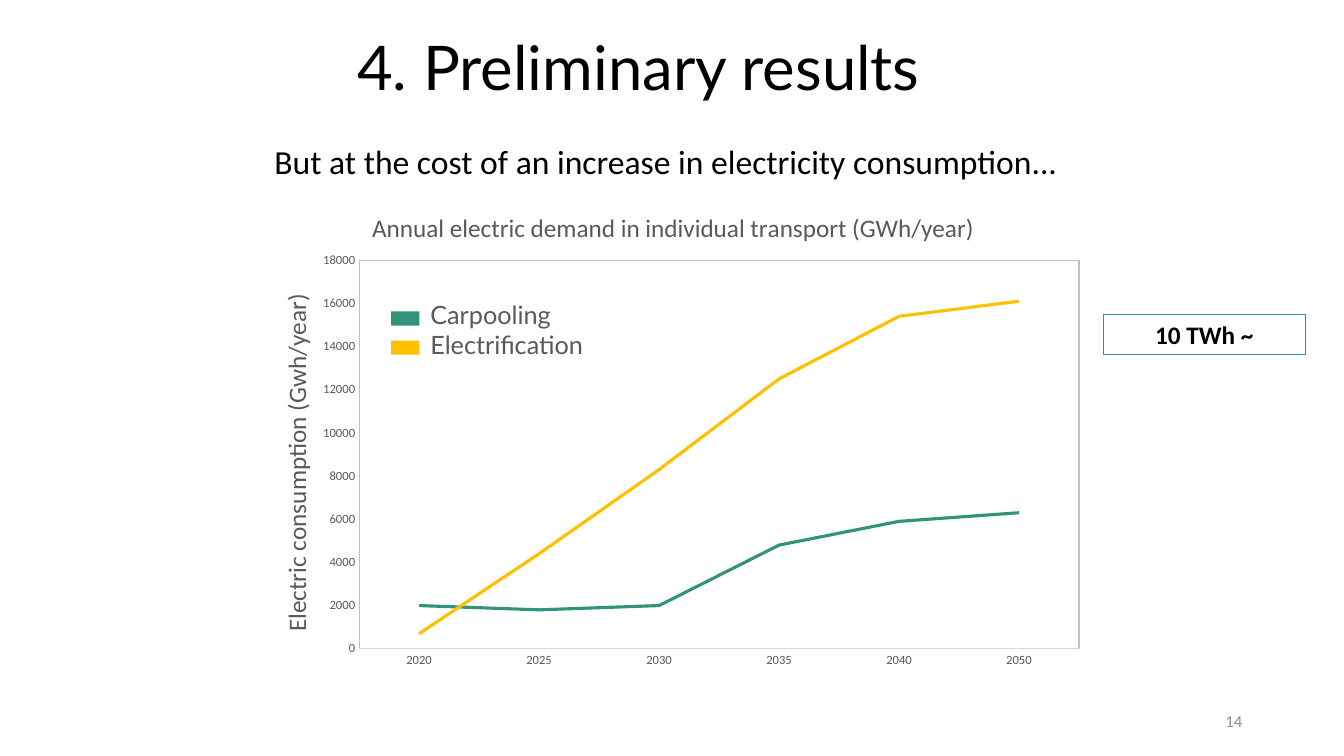
from dataclasses import dataclass

from lxml import etree
from pptx import Presentation
from pptx.chart.data import CategoryChartData
from pptx.dml.color import RGBColor
from pptx.enum import chart as ch, shapes, text
from pptx.oxml import ns, parse_xml
from pptx.util import Inches, Pt


@dataclass(frozen=True)
class Theme:
    black: str = "000000"
    grey: str = "595959"
    page_grey: str = "8C8C8C"
    frame: str = "BFBFBF"
    axis: str = "D9D9D9"
    callout: str = "2E8EA8"
    body_font: str = "Calibri"
    title_font: str = "Lato"
    title_size: int = 44
    lead_size: int = 24
    label_size: int = 18
    page_size: int = 12
    tick_size: int = 9


THEME = Theme()
YEARS = ["2020", "2025", "2030", "2035", "2040", "2050"]
SCENARIOS = [
    ("Carpooling", "31937B", [2000, 1800, 2000, 4800, 5900, 6300]),
    ("Electrification", "FFC000", [700, 4400, 8300, 12500, 15400, 16100]),
]


def box(*lengths):
    return [Inches(length) for length in lengths]


def style(font, size, color, name=THEME.body_font, bold=False):
    font.size = Pt(size)
    font.name = name
    font.bold = bold
    font.color.rgb = RGBColor.from_string(color)


def write(frame, lines, size, color, align, name=THEME.body_font, bold=False,
          anchor=text.MSO_ANCHOR.TOP):
    frame.word_wrap = True
    frame.vertical_anchor = anchor
    frame.text = "\n".join(lines)
    for paragraph in frame.paragraphs:
        paragraph.alignment = align
        style(paragraph.font, size, color, name, bold)


def add_label(slide, place, lines, *args, **kwargs):
    label = slide.shapes.add_textbox(*box(*place))
    write(label.text_frame, lines, *args, **kwargs)


def add_rectangle(slide, place, fill=None, line=None):
    rectangle = slide.shapes.add_shape(shapes.MSO_SHAPE.RECTANGLE, *box(*place))
    rectangle.shadow.inherit = False
    if fill:
        rectangle.fill.solid()
        rectangle.fill.fore_color.rgb = RGBColor.from_string(fill)
    else:
        rectangle.fill.background()
    if line:
        rectangle.line.color.rgb = RGBColor.from_string(line)
        rectangle.line.width = Pt(0.75)
    else:
        rectangle.line.fill.background()
    return rectangle


def set_layout(parent, index, inner=False, **fractions):
    for old in parent.findall(ns.qn("c:layout")):
        parent.remove(old)
    layout = etree.Element(ns.qn("c:layout"))
    manual = etree.SubElement(layout, ns.qn("c:manualLayout"))
    settings = {"layoutTarget": "inner"} if inner else {}
    settings.update(xMode="edge", yMode="edge", **fractions)
    for tag, value in settings.items():
        etree.SubElement(manual, ns.qn(f"c:{tag}")).set("val", str(value))
    parent.insert(index, layout)


def add_title(owner, title, words, x, y):
    title.text_frame.text = words
    style(title.text_frame.paragraphs[0].font, THEME.label_size, THEME.grey)
    set_layout(title._element, 1, x=x, y=y)


def frame_plot(plot_area):
    plot_area.append(parse_xml(
        f'<c:spPr {ns.nsdecls("c", "a")}><a:noFill/><a:ln w="9525"><a:solidFill>'
        f'<a:srgbClr val="{THEME.frame}"/></a:solidFill></a:ln></c:spPr>'))


def add_demand_chart(slide):
    data = CategoryChartData()
    data.categories = YEARS
    for name, _, values in SCENARIOS:
        data.add_series(name, values)
    chart = slide.shapes.add_chart(
        ch.XL_CHART_TYPE.LINE, *box(2.47, 1.85, 8.4, 4.88), data).chart
    chart.has_legend = False
    style(chart.font, THEME.tick_size, THEME.grey)
    add_title(chart, chart.chart_title,
              "Annual electric demand in individual transport (GWh/year)", 0.14, 0.04)

    years, demand = chart.category_axis, chart.value_axis
    for axis in (years, demand):
        axis.has_major_gridlines = False
        axis.major_tick_mark = axis.minor_tick_mark = ch.XL_TICK_MARK.NONE
        style(axis.tick_labels.font, THEME.tick_size, THEME.grey)
    years.format.line.color.rgb = RGBColor.from_string(THEME.axis)
    years.format.line.width = Pt(0.75)
    demand.format.line.fill.background()
    demand.minimum_scale, demand.maximum_scale, demand.major_unit = 0, 18000, 2000
    add_title(demand, demand.axis_title, "Electric consumption (Gwh/year)", 0.03, 0.21)

    plot = chart.plots[0]
    plot.vary_by_categories = False
    for series, (_, color, _) in zip(plot.series, SCENARIOS):
        series.smooth = False
        series.marker.style = ch.XL_MARKER_STYLE.NONE
        series.format.line.color.rgb = RGBColor.from_string(color)
        series.format.line.width = Pt(2.25)
    plot_area = chart._chartSpace.chart.plotArea
    set_layout(plot_area, 0, inner=True, x=0.13, y=0.15, w=0.85, h=0.79)
    frame_plot(plot_area)


def add_legend(slide):
    for row, (_, color, _) in enumerate(SCENARIOS):
        add_rectangle(slide, (3.88, 3.09 + 0.29 * row, 0.28, 0.14), fill=color)
    add_label(slide, (4.17, 2.92, 2.69, 1.31), [name for name, _, _ in SCENARIOS],
              THEME.label_size, THEME.grey, text.PP_ALIGN.LEFT, THEME.title_font)


def main():
    deck = Presentation()
    deck.slide_width, deck.slide_height = box(13.33, 7.5)
    slide = deck.slides.add_slide(deck.slide_layouts.get_by_name("Title Only"))
    center, middle = text.PP_ALIGN.CENTER, text.MSO_ANCHOR.MIDDLE

    heading = slide.shapes.title
    heading.left, heading.top, heading.width, heading.height = box(0, 0.22, 12.67, 0.95)
    write(heading.text_frame, ["4. Preliminary results"], THEME.title_size,
          THEME.black, center, THEME.title_font, anchor=middle)
    heading.text_frame.paragraphs[0].line_spacing = 0.9

    add_label(slide, (0.27, 1.35, 12.67, 0.5),
              ["But at the cost of an increase in electricity consumption..."],
              THEME.lead_size, THEME.black, center)
    add_demand_chart(slide)
    add_legend(slide)
    add_label(slide, (9.42, 6.95, 3, 0.4), ["14"], THEME.page_size,
              THEME.page_grey, text.PP_ALIGN.RIGHT, anchor=middle)
    callout = add_rectangle(slide, (10.94, 3.12, 2.01, 0.4), line=THEME.callout)
    write(callout.text_frame, ["10 TWh ~"], THEME.label_size, THEME.black, center,
          bold=True)
    deck.save("out.pptx")


if __name__ == "__main__":
    main()
